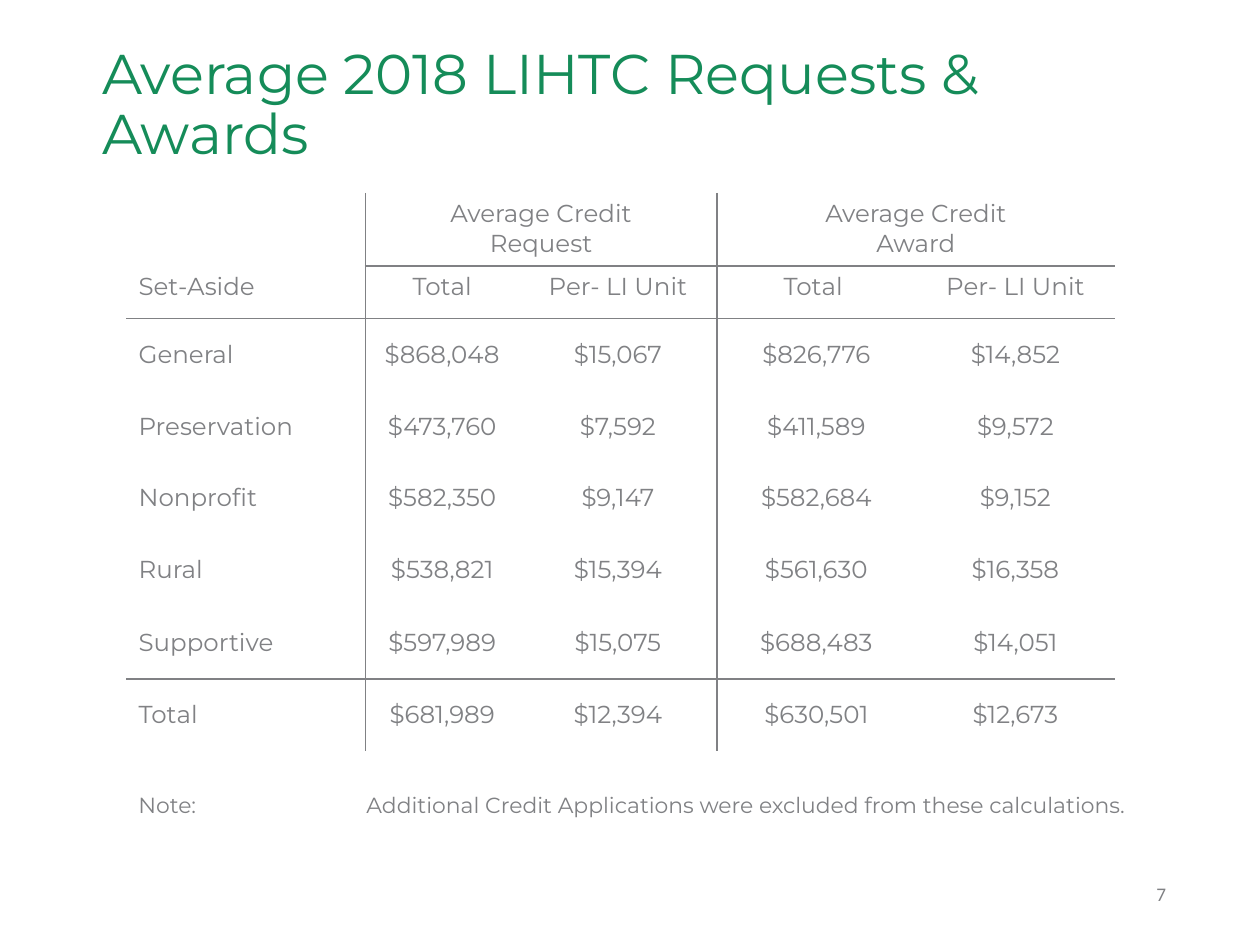
import pptx
import pptx.util
import pptx.dml.color
import pptx.enum.text
import pptx.oxml
import pptx.oxml.ns
from pptx.util import Inches

GREEN = "158C59"
GREY = "808184"
FONT = "Montserrat"
ALIGN = pptx.enum.text.PP_ALIGN
ANCHOR = pptx.enum.text.MSO_ANCHOR

COLUMN_WIDTHS = [1.9, 1.22, 1.57, 1.58, 1.58]
ROW_HEIGHTS = [0.58, 0.42] + [0.57] * 4 + [0.58, 0.57]
ROWS = [
    ["", "Average Credit\nRequest", "", "Average Credit\nAward", ""],
    ["Set-Aside", "Total", "Per- LI Unit", "Total ", "Per- LI Unit"],
    ["General", "$868,048", "$15,067", "$826,776", "$14,852"],
    ["Preservation", "$473,760", "$7,592", "$411,589", "$9,572"],
    ["Nonprofit", "$582,350", "$9,147", "$582,684", "$9,152"],
    ["Rural", "$538,821", "$15,394", "$561,630", "$16,358"],
    ["Supportive", "$597,989", "$15,075", "$688,483", "$14,051"],
    ["Total", "$681,989", "$12,394", "$630,501", "$12,673"],
]
HEADER_ROWS = 2
RULED_COLUMNS = (0, 2)  # a vertical rule follows these columns
RULED_ROWS = (0, 1, 6)  # a horizontal rule follows these rows


def color(value):
    return pptx.dml.color.RGBColor.from_string(value)


def format_text(paragraph, size, value, name=FONT):
    paragraph.font.size = pptx.util.Pt(size)
    paragraph.font.name = name
    paragraph.font.color.rgb = color(value)


def set_borders(cell, ruled_sides):
    """Draw a 1 pt rule on the given sides (L, R, T, B) and clear the rest."""
    properties = cell._tc.get_or_add_tcPr()
    for index, side in enumerate("LRTB"):
        fill = (f'<a:solidFill><a:srgbClr val="{GREY}"/></a:solidFill>'
                if side in ruled_sides else "<a:noFill/>")
        line = pptx.oxml.parse_xml(
            f'<a:ln{side} {pptx.oxml.ns.nsdecls("a")} w="12700">{fill}</a:ln{side}>')
        properties.insert(index, line)


def sides_to_rule(row, column):
    """Both cells that share a ruled edge carry the rule."""
    sides = ""
    if column in RULED_COLUMNS:
        sides += "R"
    if column - 1 in RULED_COLUMNS:
        sides += "L"
    # The rule under the group headings skips the first column
    if row in RULED_ROWS and (row, column) != (0, 0):
        sides += "B"
    if row - 1 in RULED_ROWS and (row, column) != (1, 0):
        sides += "T"
    return sides


def add_title(slide, left, top, width, height):
    title = slide.shapes.title
    title.left, title.top, title.width, title.height = left, top, width, height
    frame = title.text_frame
    frame.text = "Average 2018 LIHTC Requests & Awards"
    frame.word_wrap = True
    frame.vertical_anchor = ANCHOR.MIDDLE
    paragraph = frame.paragraphs[0]
    paragraph.alignment = ALIGN.LEFT
    paragraph.line_spacing = 0.9
    format_text(paragraph, 32, GREEN)


def add_credit_table(slide, left, top, width, height):
    table = slide.shapes.add_table(
        len(ROWS), len(COLUMN_WIDTHS), left, top, width, height).table
    table.first_row = False
    table.horz_banding = False
    for column, column_width in zip(table.columns, COLUMN_WIDTHS):
        column.width = Inches(column_width)
    for row, row_height in zip(table.rows, ROW_HEIGHTS):
        row.height = Inches(row_height)

    # Group headings span two columns each
    for first in (1, 3):
        table.cell(0, first).merge(table.cell(0, first + 1))

    for row, texts in enumerate(ROWS):
        for column, text in enumerate(texts):
            cell = table.cell(row, column)
            cell.fill.background()
            set_borders(cell, sides_to_rule(row, column))
            if cell.is_spanned:
                continue
            cell.text = text
            cell.vertical_anchor = ANCHOR.TOP if row < HEADER_ROWS else ANCHOR.MIDDLE
            for paragraph in cell.text_frame.paragraphs:
                paragraph.alignment = ALIGN.CENTER if column else ALIGN.LEFT
                format_text(paragraph, 14, GREY)


def add_note(slide, left, top, width, height):
    frame = slide.shapes.add_textbox(left, top, width, height).text_frame
    frame.word_wrap = True
    paragraph = frame.paragraphs[0]
    paragraph.text = "Note:\tAdditional Credit Applications were excluded from these calculations."
    tabs = pptx.oxml.parse_xml(
        f'<a:tabLst {pptx.oxml.ns.nsdecls("a")}>'
        f'<a:tab pos="{Inches(1.81)}" algn="l"/></a:tabLst>')
    paragraph._p.get_or_add_pPr().append(tabs)
    format_text(paragraph, 12.5, GREY)


def add_page_number(slide, left, top, width, height):
    frame = slide.shapes.add_textbox(left, top, width, height).text_frame
    frame.word_wrap = False
    frame.text = "7"
    format_text(frame.paragraphs[0], 11, GREY, "Calibri")


def main():
    presentation = pptx.Presentation()
    presentation.slide_width = Inches(10)
    presentation.slide_height = Inches(7.5)
    slide = presentation.slides.add_slide(presentation.slide_layouts[5])

    add_title(slide, Inches(0.71), Inches(0.29), Inches(8.39), Inches(1.11))
    add_credit_table(slide, Inches(1), Inches(1.53),
                     Inches(sum(COLUMN_WIDTHS)), Inches(sum(ROW_HEIGHTS)))
    add_note(slide, Inches(1), Inches(6.23), Inches(8.32), Inches(0.31))
    add_page_number(slide, Inches(9.08), Inches(6.95), Inches(0.38), Inches(0.29))

    presentation.save("out.pptx")


if __name__ == "__main__":
    main()
